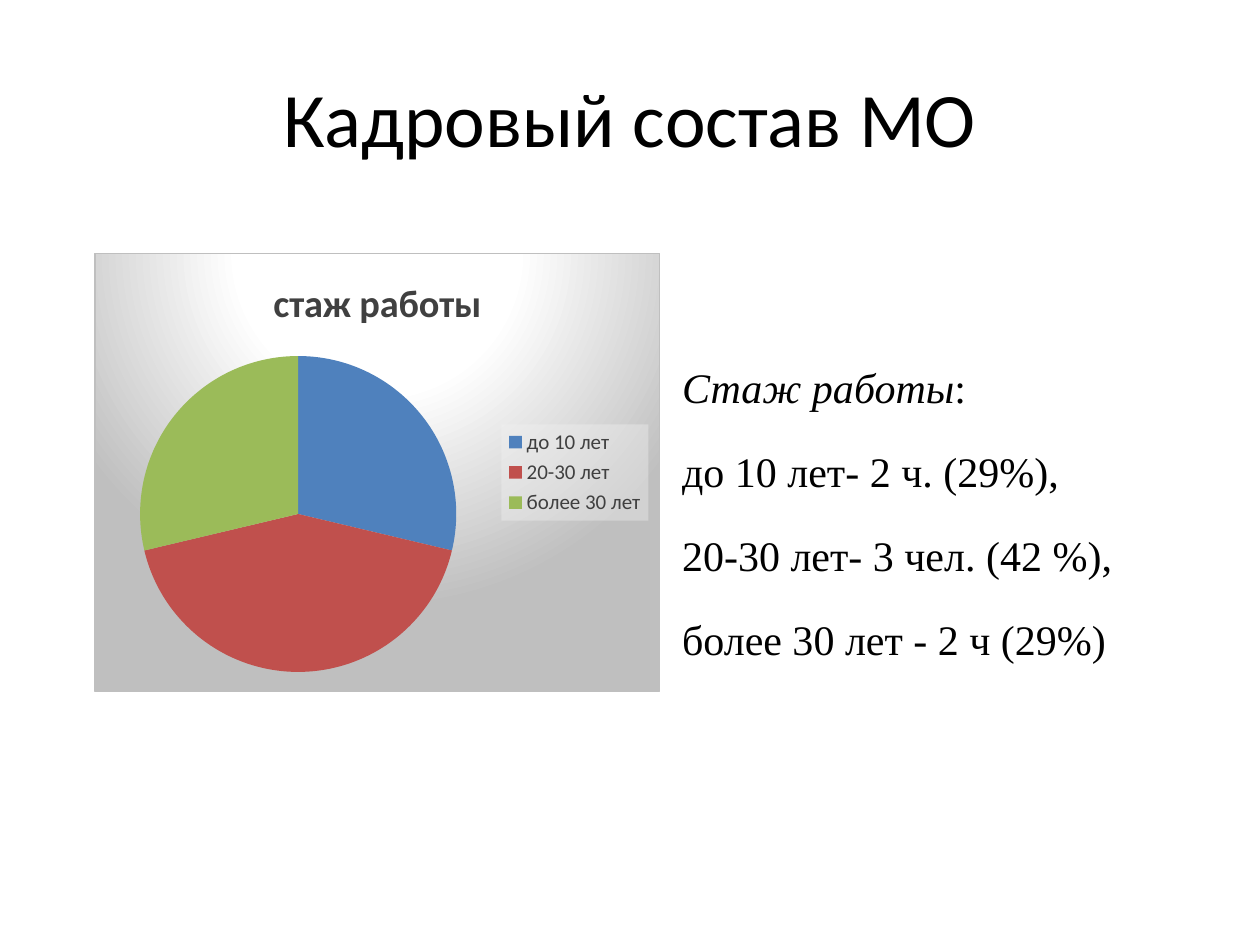
from dataclasses import dataclass

from lxml import etree
from pptx import Presentation, util as u
from pptx.chart.data import CategoryChartData
from pptx.dml.color import RGBColor
from pptx.enum import chart as charts, text as texts
from pptx.oxml import ns, parse_xml

NAMESPACES = ns.nsdecls("c", "a")
SERIES_NAME = "стаж работы"


@dataclass
class Slice:
    label: str
    value: int
    color: str


@dataclass
class Line:
    text: str
    italic: bool = False
    ending: str = ""


SLICES = [
    Slice("до 10 лет", 29, "4F81BD"),
    Slice("20-30 лет", 43, "C0504D"),
    Slice("более 30 лет", 29, "9BBB59"),
]
LINES = [
    Line("Стаж работы", italic=True, ending=":"),
    Line("до 10 лет- 2 ч. (29%),"),
    Line("20-30 лет- 3 чел. (42 %),"),
    Line("более 30 лет - 2 ч (29%)"),
]
CHART_FILL = f"""<c:spPr {NAMESPACES}>
  <a:gradFill><a:gsLst>
    <a:gs pos="0"><a:srgbClr val="FFFFFF"/></a:gs>
    <a:gs pos="39000"><a:srgbClr val="FFFFFF"/></a:gs>
    <a:gs pos="100000"><a:srgbClr val="BFBFBF"/></a:gs>
  </a:gsLst><a:path path="circle">
    <a:fillToRect l="50000" t="-80000" r="50000" b="180000"/>
  </a:path></a:gradFill>
  <a:ln w="9525"><a:solidFill><a:srgbClr val="BFBFBF"/></a:solidFill></a:ln>
</c:spPr>"""
LEGEND_FILL = f"""<c:spPr {NAMESPACES}>
  <a:solidFill><a:srgbClr val="F2F2F2"><a:alpha val="39000"/></a:srgbClr></a:solidFill>
</c:spPr>"""


def set_font(font, name: str = "Calibri", size: float = 12, color: str = "000000",
             bold: bool = False, italic: bool = False) -> None:
    font.name = name
    font.size = u.Pt(size)
    font.bold = bold
    font.italic = italic
    font.color.rgb = RGBColor.from_string(color)


def add_run(paragraph, text: str, **font_format) -> None:
    run = paragraph.add_run()
    run.text = text
    set_font(run.font, **font_format)


def place(shape, left: float, top: float, width: float, height: float) -> None:
    """Position a shape, in centimetres."""
    shape.left, shape.top = u.Cm(left), u.Cm(top)
    shape.width, shape.height = u.Cm(width), u.Cm(height)


def make_layout(x: float, y: float, w: float, h: float, inner: bool = False) -> etree._Element:
    """Manual chart layout, in fractions of the chart area."""
    target = '<c:layoutTarget val="inner"/>' if inner else ""
    return parse_xml(
        f'<c:layout {NAMESPACES}><c:manualLayout>{target}'
        f'<c:xMode val="edge"/><c:yMode val="edge"/><c:x val="{x}"/><c:y val="{y}"/>'
        f'<c:w val="{w}"/><c:h val="{h}"/></c:manualLayout></c:layout>')


def set_layout(parent, index: int, layout) -> None:
    for old in parent.findall(ns.qn("c:layout")):
        parent.remove(old)
    parent.insert(index, layout)


def add_title(slide, text: str) -> None:
    title = slide.shapes.title
    place(title, 1.27, 0.76, 22.86, 3.18)
    title.text_frame.vertical_anchor = texts.MSO_ANCHOR.MIDDLE
    paragraph = title.text_frame.paragraphs[0]
    paragraph.alignment = texts.PP_ALIGN.CENTER
    add_run(paragraph, text, size=44)


def add_experience_chart(slide) -> None:
    data = CategoryChartData()
    data.categories = [item.label for item in SLICES]
    data.add_series(SERIES_NAME, [item.value for item in SLICES])
    chart = slide.shapes.add_chart(
        charts.XL_CHART_TYPE.PIE, u.Cm(1.9), u.Cm(5.1), u.Cm(11.41), u.Cm(8.85), data).chart
    set_font(chart.font, size=10)

    chart.has_title = True
    add_run(chart.chart_title.text_frame.paragraphs[0], SERIES_NAME,
            size=22, color="404040", bold=True)
    chart.chart_title.include_in_layout = False

    plot = chart.plots[0]
    plot.vary_by_categories = True
    for index, item in enumerate(SLICES):
        fill = plot.series[0].points[index].format.fill
        fill.solid()
        fill.fore_color.rgb = RGBColor.from_string(item.color)

    chart.has_legend = True
    legend = chart.legend
    legend.position = charts.XL_LEGEND_POSITION.RIGHT
    legend.include_in_layout = False
    set_font(legend.font, color="404040")

    chart_space = chart.element
    chart_space.find(ns.qn("c:chart")).addnext(parse_xml(CHART_FILL))
    legend_element = chart_space.find(".//" + ns.qn("c:legend"))
    legend_element.find(ns.qn("c:overlay")).addnext(parse_xml(LEGEND_FILL))
    set_layout(legend_element, 1, make_layout(0.72, 0.39, 0.26, 0.22))
    plot_area = chart_space.find(".//" + ns.qn("c:plotArea"))
    set_layout(plot_area, 0, make_layout(0.08, 0.23, 0.56, 0.73, inner=True))


def add_experience_text(slide) -> None:
    box = slide.shapes.add_textbox(u.Cm(13.5), u.Cm(6.65), u.Cm(10), u.Cm(7.7))
    frame = box.text_frame
    frame.word_wrap = True
    for index, line in enumerate(LINES):
        paragraph = frame.add_paragraph() if index else frame.paragraphs[0]
        paragraph.alignment = texts.PP_ALIGN.JUSTIFY
        paragraph.line_spacing = 1.5
        paragraph.space_before = u.Pt(4.8 if index else 0)
        add_run(paragraph, line.text, name="Times New Roman", size=24, italic=line.italic)
        if line.ending:
            add_run(paragraph, line.ending, name="Times New Roman", size=24)


def main() -> None:
    presentation = Presentation()
    presentation.slide_width, presentation.slide_height = u.Cm(25.4), u.Cm(19.05)
    slide = presentation.slides.add_slide(presentation.slide_layouts.get_by_name("Title Only"))
    add_title(slide, "Кадровый состав МО")
    add_experience_text(slide)
    add_experience_chart(slide)
    presentation.save("out.pptx")


if __name__ == "__main__":
    main()
